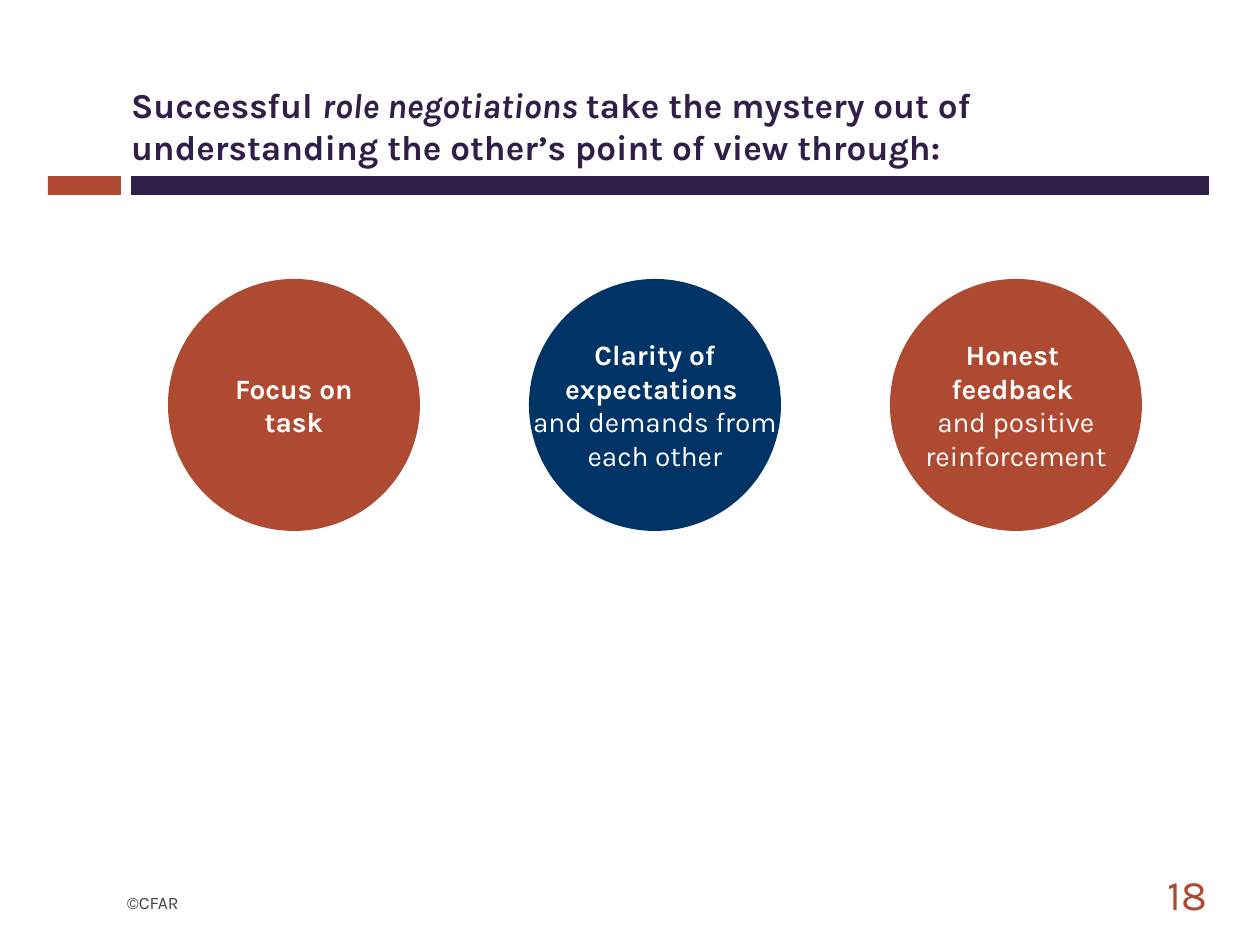
import copy
from dataclasses import dataclass

import pptx
import pptx.dml.color
import pptx.enum.shapes
import pptx.enum.text
import pptx.util

RGBColor = pptx.dml.color.RGBColor
Align = pptx.enum.text.PP_ALIGN
Anchor = pptx.enum.text.MSO_ANCHOR
Preset = pptx.enum.shapes.MSO_SHAPE

PX_PER_INCH = 126
FONT = "Karla"
RUST = RGBColor(0xAE, 0x4A, 0x32)
PLUM = RGBColor(0x30, 0x1F, 0x49)
NAVY = RGBColor(0x00, 0x33, 0x66)
GREY = RGBColor(0x40, 0x40, 0x40)
WHITE = RGBColor(0xFF, 0xFF, 0xFF)

CIRCLE_SIZE = 252
CIRCLE_LEFT = 168
CIRCLE_PITCH = 361
CIRCLE_TOP = 279


@dataclass(frozen=True)
class Box:
    x: int
    y: int
    w: int
    h: int

    def emu(self) -> list[int]:
        return [px(v) for v in (self.x, self.y, self.w, self.h)]


@dataclass(frozen=True)
class Segment:
    text: str
    bold: bool = False
    italic: bool = False


@dataclass(frozen=True)
class Style:
    size: int
    color: RGBColor
    align: Align = Align.LEFT
    anchor: Anchor = Anchor.MIDDLE
    wrap: bool = True


@dataclass(frozen=True)
class Circle:
    color: RGBColor
    segments: tuple[Segment, ...]
    wrap: bool = False


def px(value: int) -> int:
    return pptx.util.Emu(round(value * pptx.util.Inches(1) / PX_PER_INCH))


def write(tf, segments: tuple[Segment, ...], style: Style,
          insets: tuple[int, int, int, int]) -> None:
    tf.word_wrap = style.wrap
    tf.auto_size = pptx.enum.text.MSO_AUTO_SIZE.NONE
    tf.vertical_anchor = style.anchor
    tf.margin_left, tf.margin_top, tf.margin_right, tf.margin_bottom = map(px, insets)
    p = tf.paragraphs[0]
    p.alignment = style.align
    for segment in segments:
        for i, line in enumerate(segment.text.split("\n")):
            if i:
                p.add_line_break()
                p._p[-1].append(copy.deepcopy(r._r.rPr))
            if not line:
                continue
            r = p.add_run()
            r.text = line
            r.font.name = FONT
            r.font.size = pptx.util.Pt(style.size)
            r.font.bold = segment.bold
            r.font.italic = segment.italic
            r.font.color.rgb = style.color


def add_filled(s, preset: Preset, box: Box, color: RGBColor):
    sp = s.shapes.add_shape(preset, *box.emu())
    sp.shadow.inherit = False
    sp.fill.solid()
    sp.fill.fore_color.rgb = color
    sp.line.fill.background()
    return sp


def add_label(s, box: Box, text: str, style: Style) -> None:
    sp = s.shapes.add_textbox(*box.emu())
    write(sp.text_frame, (Segment(text),), style, (0, 0, 0, 0))


def set_title(s, box: Box, segments: tuple[Segment, ...]) -> None:
    sp = s.shapes.title
    sp.left, sp.top, sp.width, sp.height = box.emu()
    write(sp.text_frame, segments, Style(20, PLUM, anchor=Anchor.BOTTOM), (0, 6, 13, 6))


def add_circle(s, index: int, circle: Circle) -> None:
    box = Box(CIRCLE_LEFT + index * CIRCLE_PITCH, CIRCLE_TOP, CIRCLE_SIZE, CIRCLE_SIZE)
    sp = add_filled(s, Preset.OVAL, box, circle.color)
    style = Style(16, WHITE, Align.CENTER, wrap=circle.wrap)
    write(sp.text_frame, circle.segments, style, (13, 6, 13, 6))


TITLE = (
    Segment("Successful ", bold=True),
    Segment("role negotiations ", bold=True, italic=True),
    Segment("take the mystery out of understanding the other’s point of view through:",
            bold=True),
)

CIRCLES = (
    Circle(RUST, (Segment("Focus on task", bold=True),), wrap=True),
    Circle(NAVY, (Segment("Clarity of\nexpectations \n", bold=True),
                  Segment("and demands from\neach other"))),
    Circle(RUST, (Segment("Honest \nfeedback \n", bold=True),
                  Segment("and positive\nreinforcement"))),
)


def main() -> None:
    prs = pptx.Presentation()
    prs.slide_width = pptx.util.Inches(10)
    prs.slide_height = pptx.util.Inches(7.5)
    s = prs.slides.add_slide(prs.slide_layouts[5])

    add_filled(s, Preset.RECTANGLE, Box(48, 176, 73, 19), RUST)
    add_filled(s, Preset.RECTANGLE, Box(131, 176, 1078, 19), PLUM)
    set_title(s, Box(131, 63, 1076, 111), TITLE)
    add_label(s, Box(127, 883, 61, 39), "©CFAR", Style(10, GREY))
    add_label(s, Box(1121, 861, 86, 65), "18", Style(24, RUST, Align.RIGHT))
    for index, circle in enumerate(CIRCLES):
        add_circle(s, index, circle)

    prs.save("out.pptx")


if __name__ == "__main__":
    main()
